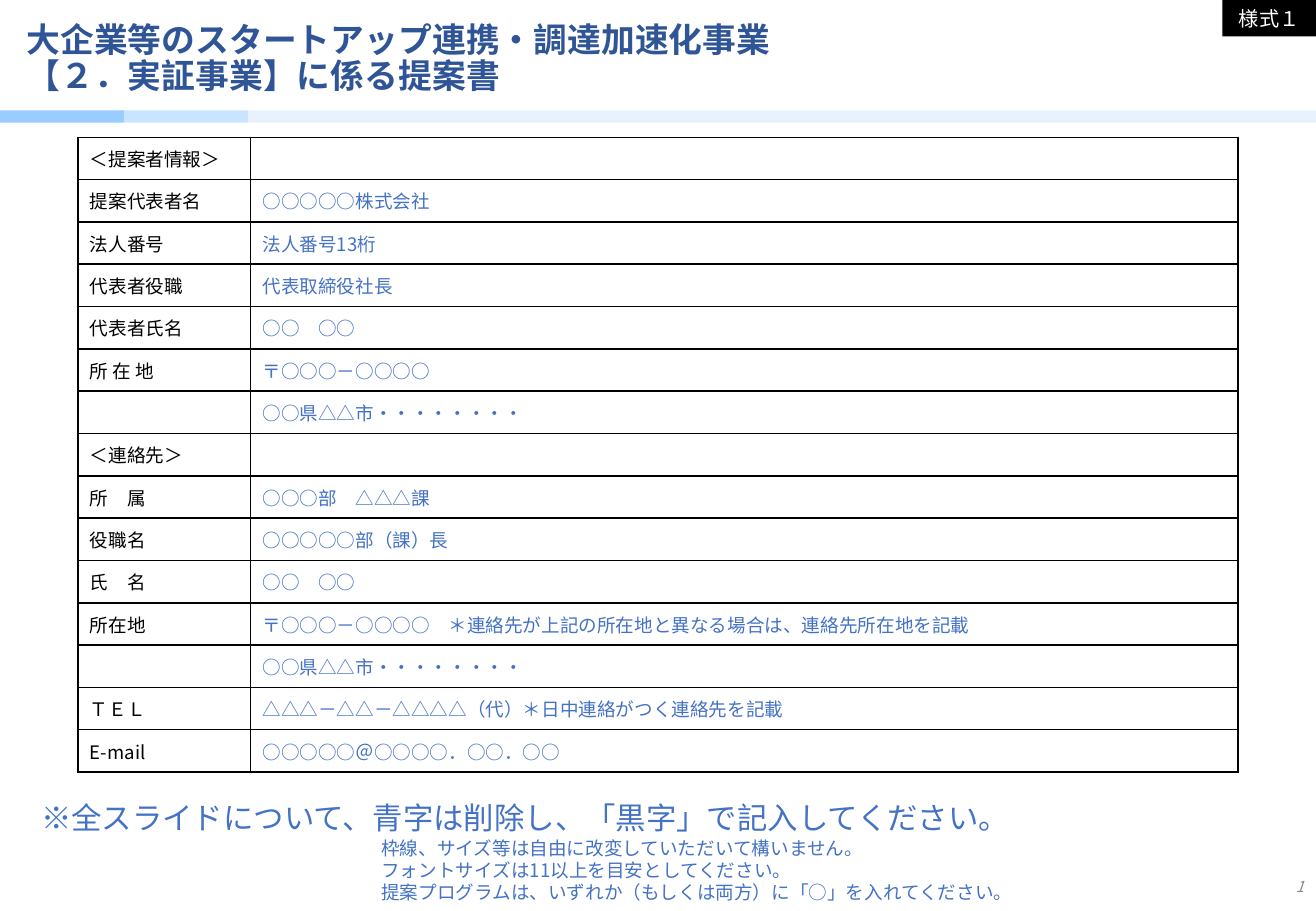
from dataclasses import dataclass

from lxml.etree import SubElement
from pptx import Presentation
from pptx.dml.color import RGBColor
from pptx.enum.shapes import MSO_SHAPE
from pptx.enum.text import MSO_ANCHOR, PP_ALIGN
from pptx.oxml.ns import qn
from pptx.util import Inches, Pt


@dataclass(frozen=True)
class Theme:
    font: str = "Noto Sans CJK JP"
    title: str = "2F5597"
    black: str = "000000"
    white: str = "FFFFFF"
    blue: str = "4472C4"
    gray: str = "8C8C8C"
    bands: tuple = ("99CCFF", "C9E4FE", "E7F2FD")
    head: int = 20
    lead: int = 18
    tag: int = 12
    body: int = 11
    page: int = 9


THEME = Theme()

ROWS = [
    ("＜提案者情報＞", ""),
    ("提案代表者名", "○○○○○株式会社"),
    ("法人番号", "法人番号13桁"),
    ("代表者役職", "代表取締役社長"),
    ("代表者氏名", "○○　○○"),
    ("所 在 地", "〒○○○－○○○○"),
    ("", "○○県△△市・・・・・・・・"),
    ("＜連絡先＞", ""),
    ("所　属", "○○○部　△△△課"),
    ("役職名", "○○○○○部（課）長"),
    ("氏　名", "○○　○○"),
    ("所在地", "〒○○○－○○○○　＊連絡先が上記の所在地と異なる場合は、連絡先所在地を記載"),
    ("", "○○県△△市・・・・・・・・"),
    ("ＴＥＬ", "△△△－△△－△△△△（代）＊日中連絡がつく連絡先を記載"),
    ("E-mail", "○○○○○＠○○○○．○○．○○"),
]

HINTS = [
    "枠線、サイズ等は自由に改変していただいて構いません。",
    "フォントサイズは11以上を目安としてください。",
    "提案プログラムは、いずれか（もしくは両方）に「○」を入れてください。",
]


def write(frame, lines, size, color, bold=False, italic=False,
          align=PP_ALIGN.LEFT, spacing=None):
    """Fill a text frame with one paragraph per line, in one style."""
    for i, line in enumerate(lines):
        para = frame.paragraphs[0] if i == 0 else frame.add_paragraph()
        para.text = line
        para.alignment = align
        if spacing:
            para.line_spacing = spacing
        for run in para.runs:
            font = run.font
            font.name, font.size = THEME.font, Pt(size)
            font.bold, font.italic = bold, italic
            font.color.rgb = RGBColor.from_string(color)
            SubElement(font._element, qn("a:ea"), typeface=THEME.font)
        if not line:
            SubElement(para._p, qn("a:endParaRPr"), sz=str(size * 100))


def add_text(slide, box, lines, size, color, anchor=MSO_ANCHOR.TOP, **style):
    frame = slide.shapes.add_textbox(*map(Inches, box)).text_frame
    frame.word_wrap = True
    frame.vertical_anchor = anchor
    write(frame, lines, size, color, **style)


def add_rect(slide, box, color):
    rect = slide.shapes.add_shape(MSO_SHAPE.RECTANGLE, *map(Inches, box))
    rect.shadow.inherit = False
    rect.fill.solid()
    rect.fill.fore_color.rgb = RGBColor.from_string(color)
    rect.line.fill.background()
    return rect


def add_header(slide, left, top, width):
    step = 1.02
    for i, color in enumerate(THEME.bands):
        x = i * step
        wide = step if i < 2 else width - x
        add_rect(slide, (left + x, top + 0.91, wide, 0.1), color)
    title = "大企業等のスタートアップ連携・調達加速化事業\n【２．実証事業】に係る提案書"
    add_text(slide, (left + 0.12, top + 0.11, 9.21, 0.76), [title],
             THEME.head, THEME.title, MSO_ANCHOR.MIDDLE, bold=True, spacing=0.9)
    tag = add_rect(slide, (left + width - 0.77, top, 0.77, 0.3), THEME.black)
    write(tag.text_frame, ["様式１"], THEME.tag, THEME.white,
          align=PP_ALIGN.CENTER)


def set_edges(cell):
    props = cell._tc.get_or_add_tcPr()
    for side in ("lnL", "lnR", "lnT", "lnB"):
        line = SubElement(props, qn(f"a:{side}"), w=str(Pt(1)))
        fill = SubElement(line, qn("a:solidFill"))
        SubElement(fill, qn("a:srgbClr"), val=THEME.black)


def add_form(slide, left, top, width, height):
    table = slide.shapes.add_table(
        len(ROWS), 2, *map(Inches, (left, top, width, height))).table
    table.first_row = table.horz_banding = False
    label = 1.42
    table.columns[0].width = Inches(label)
    table.columns[1].width = Inches(width - label)
    for r, texts in enumerate(ROWS):
        for c, (text, color) in enumerate(zip(texts, (THEME.black, THEME.blue))):
            cell = table.cell(r, c)
            set_edges(cell)
            cell.fill.background()
            cell.vertical_anchor = MSO_ANCHOR.MIDDLE
            write(cell.text_frame, [text], THEME.body, color)


def add_footer(slide, left, top, width):
    add_text(slide, (left + width - 0.99, top + 0.57, 0.99, 0.4), ["1"],
             THEME.page, THEME.gray, MSO_ANCHOR.MIDDLE, italic=True,
             align=PP_ALIGN.RIGHT)
    add_text(slide, (left + 3.04, top + 0.31, 5.42, 0.66), HINTS,
             THEME.body, THEME.blue)
    add_text(slide, (left + 0.24, top, 8.46, 0.4),
             ["※全スライドについて、青字は削除し、「黒字」で記入してください。"],
             THEME.lead, THEME.blue)


def main():
    deck = Presentation()
    wide, high = 10.83, 7.5
    deck.slide_width, deck.slide_height = Inches(wide), Inches(high)
    slide = deck.slides.add_slide(deck.slide_layouts[6])
    add_header(slide, 0, 0, wide)
    add_form(slide, 0.64, 1.13, 9.55, 5.23)
    add_footer(slide, 0, 6.53, wide)
    deck.save("out.pptx")


if __name__ == "__main__":
    main()
